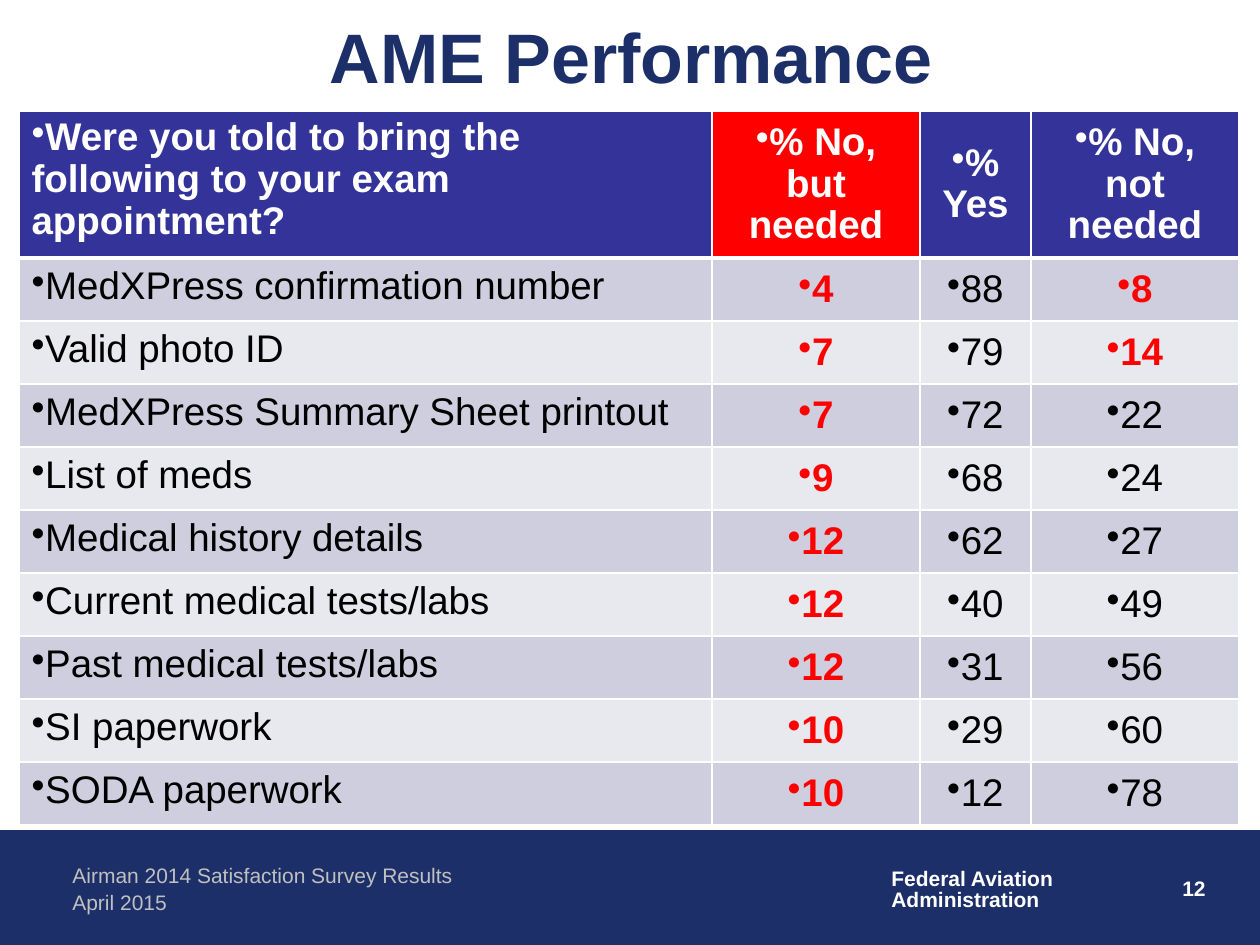
import pptx
import pptx.util
import pptx.dml.color
import pptx.enum.shapes
import pptx.enum.text
import pptx.oxml.ns
import lxml.etree

ALIGN = pptx.enum.text.PP_ALIGN
ANCHOR = pptx.enum.text.MSO_ANCHOR

# Content
HEADINGS = ["Were you told to bring the following to your exam appointment?",
            "% No, but needed", "% Yes", "% No, not needed"]
ANSWERS = [
    ("MedXPress confirmation number", 4, 88, 8),
    ("Valid photo ID", 7, 79, 14),
    ("MedXPress Summary Sheet printout", 7, 72, 22),
    ("List of meds", 9, 68, 24),
    ("Medical history details", 12, 62, 27),
    ("Current medical tests/labs", 12, 40, 49),
    ("Past medical tests/labs", 12, 31, 56),
    ("SI paperwork", 10, 29, 60),
    ("SODA paperwork", 10, 12, 78),
]
ALERT_CELLS = {(row, 1) for row in range(1, 10)} | {(1, 3), (2, 3)}

NAVY, INDIGO, RED, WHITE, BLACK = "1D2F68", "333399", "FF0000", "FFFFFF", "000000"
SILVER = "C0C0C0"
BANDS = ["CECEDE", "E8E8EF"]

# lines, (left, top, width, height), size, colour, bold, align, anchor, line spacing
TEXTS = [
    (["AME Performance"], (47, 14, 1168, 84), 40, NAVY, True, ALIGN.CENTER, ANCHOR.MIDDLE, 1),
    (["12"], (956, 869, 262, 63), 12, WHITE, True, ALIGN.RIGHT, ANCHOR.TOP, 1),
    (["Federal Aviation", "Administration"], (879, 863, 189, 55), 12, WHITE, True,
     ALIGN.LEFT, ANCHOR.TOP, 0.85),
    (["Airman 2014 Satisfaction Survey Results"], (60, 856, 659, 38), 12, SILVER, False,
     ALIGN.LEFT, ANCHOR.TOP, 1),
    (["April 2015"], (60, 883, 515, 38), 12, SILVER, False, ALIGN.LEFT, ANCHOR.TOP, 1),
]

# Table layout in px
TABLE_LEFT, TABLE_TOP = 19, 111
COLUMN_WIDTHS = [693, 208, 111, 208]
ROW_HEIGHTS = [141] + [63] * len(ANSWERS)


def px(count):
    return pptx.util.Emu(count * 914400 // 126)


def colour(value):
    return pptx.dml.color.RGBColor.from_string(value)


def style(para, size, shade, bold, align, spacing):
    para.alignment = align
    para.line_spacing = spacing
    for span in para.runs:
        span.font.name = "Arial"
        span.font.size = pptx.util.Pt(size)
        span.font.bold = bold
        span.font.color.rgb = colour(shade)


def add_bullet(para):
    props = para._p.get_or_add_pPr()
    props.set("marL", "0")
    props.set("indent", "0")
    bullet = lxml.etree.SubElement(props, pptx.oxml.ns.qn("a:buChar"))
    bullet.set("char", "•")


def add_borders(cell, widths):
    props = cell._tc.get_or_add_tcPr()
    for index, (side, points) in enumerate(widths.items()):
        line = lxml.etree.Element(pptx.oxml.ns.qn("a:ln" + side), w=str(points * 12700))
        fill = lxml.etree.SubElement(line, pptx.oxml.ns.qn("a:solidFill"))
        lxml.etree.SubElement(fill, pptx.oxml.ns.qn("a:srgbClr"), val=WHITE)
        props.insert(index, line)


def add_text(page, lines, place, size, shade, bold, align, anchor, spacing):
    box = page.shapes.add_textbox(*map(px, place))
    frame = box.text_frame
    frame.word_wrap = True
    frame.vertical_anchor = anchor
    frame.text = "\n".join(lines)
    for para in frame.paragraphs:
        style(para, size, shade, bold, align, spacing)


def add_survey_table(page):
    rows = [HEADINGS] + ANSWERS
    frame = page.shapes.add_table(len(rows), len(HEADINGS), px(TABLE_LEFT), px(TABLE_TOP),
                                  px(sum(COLUMN_WIDTHS)), px(sum(ROW_HEIGHTS)))
    table = frame.table
    for column, width in zip(table.columns, COLUMN_WIDTHS):
        column.width = px(width)
    for row, height in zip(table.rows, ROW_HEIGHTS):
        row.height = px(height)

    for r, values in enumerate(rows):
        for c, value in enumerate(values):
            cell = table.cell(r, c)
            header, alert = r == 0, (r, c) in ALERT_CELLS
            if header:
                fill, shade = (RED if c == 1 else INDIGO), WHITE
            else:
                fill, shade = BANDS[(r - 1) % 2], (RED if alert else BLACK)
            cell.fill.solid()
            cell.fill.fore_color.rgb = colour(fill)
            add_borders(cell, {"L": 1, "R": 1, "T": 3 if r == 1 else 1, "B": 3 if header else 1})
            cell.vertical_anchor = ANCHOR.MIDDLE if c else ANCHOR.TOP
            para = cell.text_frame.paragraphs[0]
            para.text = str(value)
            add_bullet(para)
            style(para, 22, shade, header or alert, ALIGN.CENTER if c else ALIGN.LEFT,
                  0.97 if header else 1)


def main():
    deck = pptx.Presentation()
    deck.slide_width, deck.slide_height = px(1260), px(945)
    page = deck.slides.add_slide(deck.slide_layouts[6])

    # Footer band
    band = page.shapes.add_shape(pptx.enum.shapes.MSO_SHAPE.RECTANGLE,
                                 px(0), px(831), px(1260), px(113))
    band.shadow.inherit = False
    band.fill.solid()
    band.fill.fore_color.rgb = colour(NAVY)
    band.line.color.rgb = colour(NAVY)
    band.line.width = pptx.util.Pt(0.75)

    # Title and footer texts, then the survey table
    for text in TEXTS:
        add_text(page, *text)
    add_survey_table(page)
    deck.save("out.pptx")


if __name__ == "__main__":
    main()
